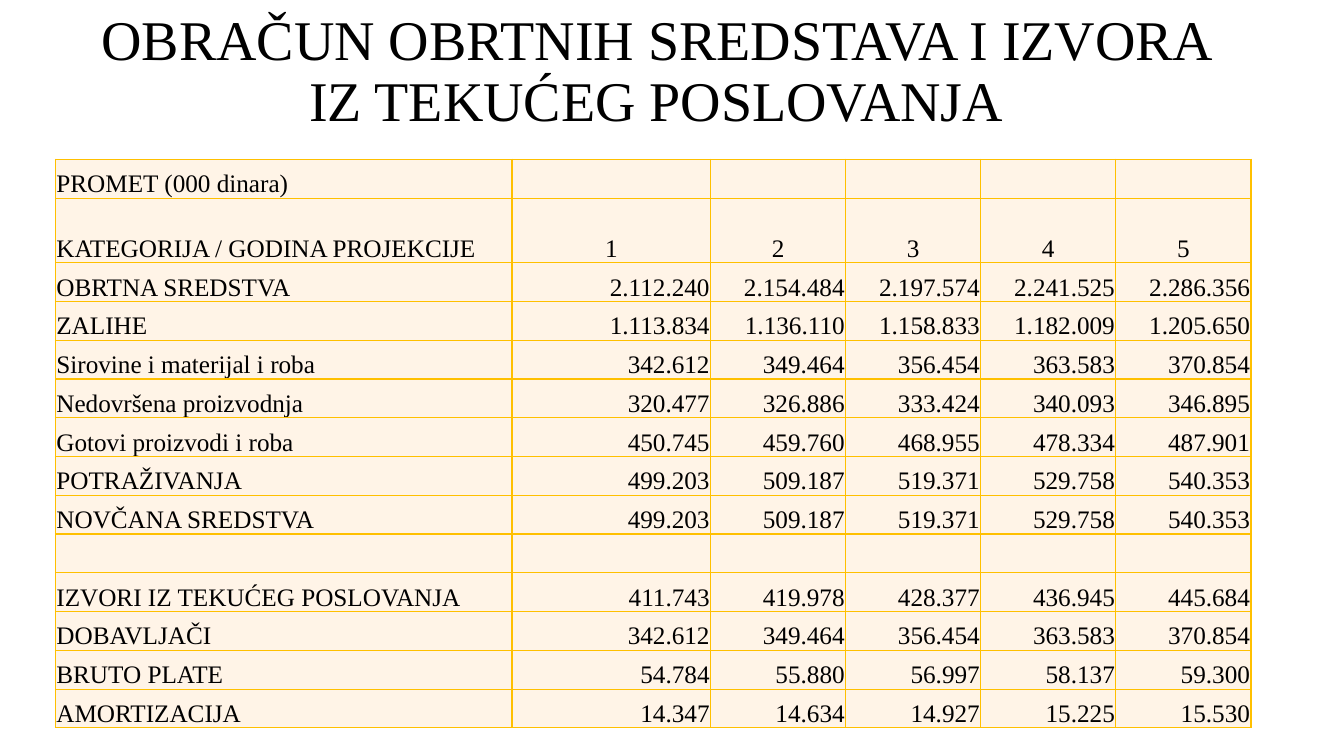
import lxml.etree
import pptx
import pptx.dml.color
import pptx.enum.text
import pptx.oxml.ns
import pptx.util

Pt = pptx.util.Pt
ALIGN = pptx.enum.text.PP_ALIGN
ANCHOR = pptx.enum.text.MSO_ANCHOR
FONT = "Times New Roman"
YEARS = 5
HEADER_ROW = 1
ROWS = [
    ("PROMET (000 dinara)", ""),
    ("KATEGORIJA / GODINA PROJEKCIJE", "1 2 3 4 5"),
    ("OBRTNA SREDSTVA", "2.112.240 2.154.484 2.197.574 2.241.525 2.286.356"),
    ("ZALIHE", "1.113.834 1.136.110 1.158.833 1.182.009 1.205.650"),
    ("Sirovine i materijal i roba", "342.612 349.464 356.454 363.583 370.854"),
    ("Nedovršena proizvodnja", "320.477 326.886 333.424 340.093 346.895"),
    ("Gotovi proizvodi i roba", "450.745 459.760 468.955 478.334 487.901"),
    ("POTRAŽIVANJA", "499.203 509.187 519.371 529.758 540.353"),
    ("NOVČANA SREDSTVA", "499.203 509.187 519.371 529.758 540.353"),
    ("", ""),
    ("IZVORI IZ TEKUĆEG POSLOVANJA", "411.743 419.978 428.377 436.945 445.684"),
    ("DOBAVLJAČI", "342.612 349.464 356.454 363.583 370.854"),
    ("BRUTO PLATE", "54.784 55.880 56.997 58.137 59.300"),
    ("AMORTIZACIJA", "14.347 14.634 14.927 15.225 15.530"),
]
CELL_FORMAT = {
    "vertical_anchor": ANCHOR.BOTTOM,
    "margin_left": Pt(0.7),
    "margin_right": Pt(0.7),
    "margin_top": Pt(0.7),
    "margin_bottom": 0,
}


def write(para, text, size):
    span = para.add_run()
    span.text = text
    for name, value in {"name": FONT, "size": Pt(size)}.items():
        setattr(span.font, name, value)
    span.font.color.rgb = pptx.dml.color.RGBColor.from_string("000000")


def style_cell(cell, fill, border):
    """Set margins, 1 pt borders on all four sides, and the fill."""
    for name, value in CELL_FORMAT.items():
        setattr(cell, name, value)
    properties = cell._tc.get_or_add_tcPr()
    for side in ("lnL", "lnR", "lnT", "lnB"):
        line = lxml.etree.SubElement(properties, pptx.oxml.ns.qn(f"a:{side}"), w=str(Pt(1)))
        solid = lxml.etree.SubElement(line, pptx.oxml.ns.qn("a:solidFill"))
        lxml.etree.SubElement(solid, pptx.oxml.ns.qn("a:srgbClr"), val=border)
    cell.fill.solid()
    cell.fill.fore_color.rgb = pptx.dml.color.RGBColor.from_string(fill)


deck = pptx.Presentation()
deck.slide_width, deck.slide_height = Pt(960), Pt(540)
page = deck.slides.add_slide(deck.slide_layouts[5])

title = page.shapes.title
title_place = {"left": Pt(43.2), "top": Pt(0), "width": Pt(851), "height": Pt(104.4)}
for name, value in title_place.items():
    setattr(title, name, value)
title_format = {
    "word_wrap": True,
    "auto_size": pptx.enum.text.MSO_AUTO_SIZE.NONE,
    "vertical_anchor": ANCHOR.MIDDLE,
}
for name, value in title_format.items():
    setattr(title.text_frame, name, value)
heading = title.text_frame.paragraphs[0]
heading.alignment = ALIGN.CENTER
heading.line_spacing = 0.9
write(heading, "OBRAČUN OBRTNIH SREDSTAVA I IZVORA IZ TEKUĆEG POSLOVANJA", 40)

frame = page.shapes.add_table(
    len(ROWS), YEARS + 1, Pt(39.6), Pt(113.8), Pt(854), Pt(406.2)
)
table = frame.table
for column, width in zip(table.columns, [326.2, 141.8] + [96.5] * (YEARS - 1)):
    column.width = Pt(width)

for row_index, (label, values) in enumerate(ROWS):
    table.rows[row_index].height = Pt(46.1 if row_index == HEADER_ROW else 27.7)
    texts = [label] + (values.split() or [""] * YEARS)
    for column_index, text in enumerate(texts):
        cell = table.cell(row_index, column_index)
        style_cell(cell, "FFF4E7", "FFC000")
        if not text:
            continue
        para = cell.text_frame.paragraphs[0]
        if column_index == 0:
            para.alignment = ALIGN.LEFT
        else:
            para.alignment = ALIGN.CENTER if row_index == HEADER_ROW else ALIGN.RIGHT
        write(para, text, 18)

deck.save("out.pptx")
